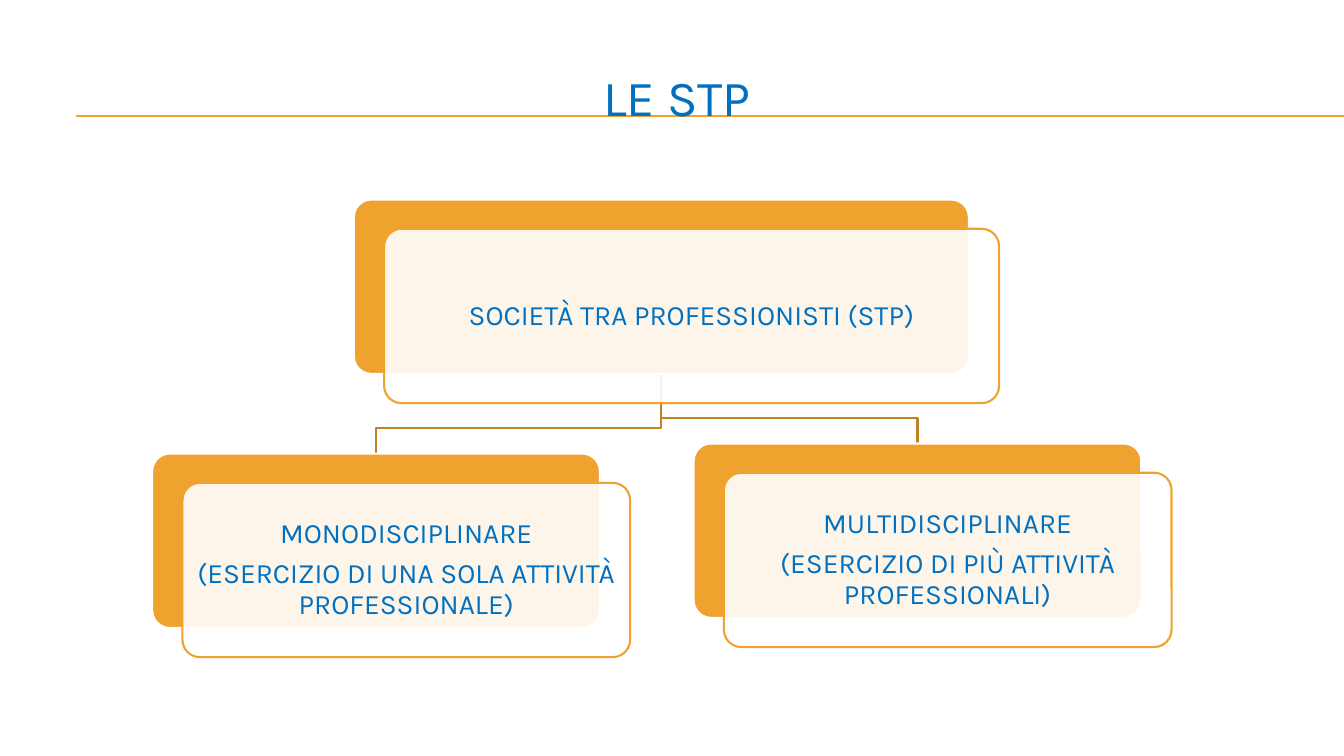
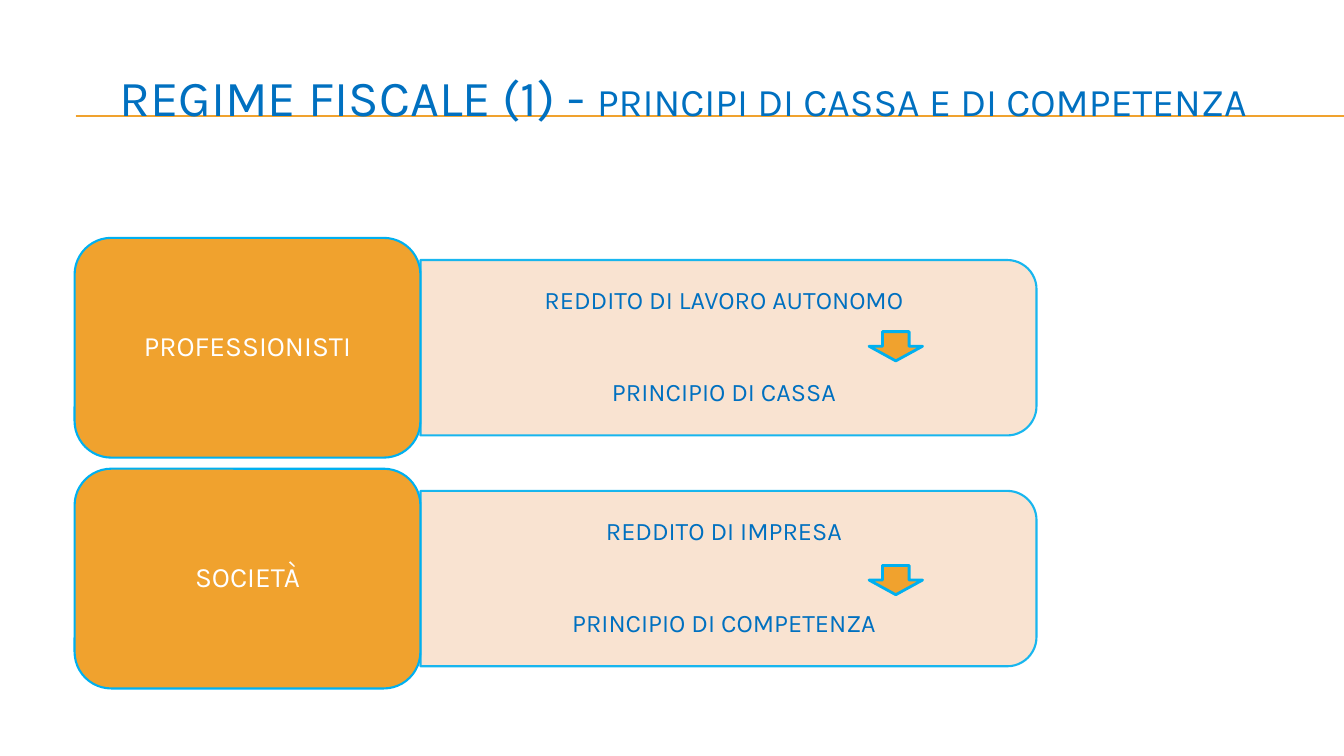
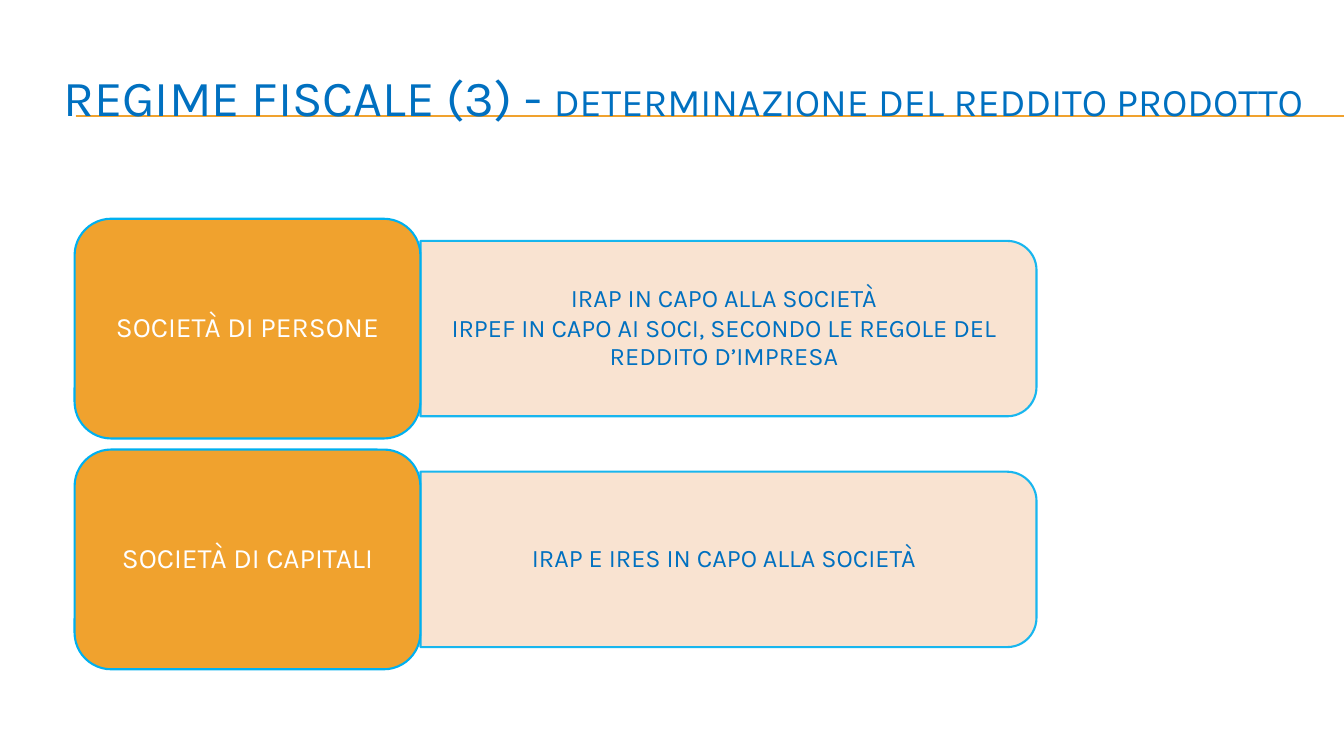
"""Builds three slides on professional partnerships and their tax regime."""
from dataclasses import dataclass

from lxml import etree
from pptx import Presentation
from pptx.dml.color import RGBColor
from pptx.enum.shapes import MSO_CONNECTOR, MSO_SHAPE
from pptx.enum.text import MSO_ANCHOR, MSO_AUTO_SIZE, PP_ALIGN
from pptx.oxml.ns import qn
from pptx.util import Inches, Pt

STRAIGHT = MSO_CONNECTOR.STRAIGHT
ROUNDED = MSO_SHAPE.ROUNDED_RECTANGLE
ROUND_TOP = MSO_SHAPE.ROUND_2_SAME_RECTANGLE
DOWN_ARROW = MSO_SHAPE.DOWN_ARROW
MIDDLE = MSO_ANCHOR.MIDDLE
CENTER = PP_ALIGN.CENTER
NO_FIT = MSO_AUTO_SIZE.NONE


@dataclass(frozen=True)
class Theme:
    font: str = "Karla"
    blue: RGBColor = RGBColor(0x00, 0x70, 0xC0)
    sky: RGBColor = RGBColor(0x00, 0xB0, 0xF0)
    orange: RGBColor = RGBColor(0xF0, 0xA2, 0x2E)
    brown: RGBColor = RGBColor(0xC0, 0x82, 0x25)
    peach: RGBColor = RGBColor(0xF9, 0xE0, 0xCD)
    white: RGBColor = RGBColor(0xFF, 0xFF, 0xFF)
    title: int = 36
    subtitle: int = 28
    label: int = 20
    detail: int = 18
    rule: float = 0.75
    outline: float = 1.5
    opacity: int = 90


class Deck:
    LABEL_W, LABEL_H = 3.43, 2.18
    PANEL_W, PANEL_H = 6.11, 1.74
    ROW_PITCH = 2.29
    CARD_H = 1.73

    def __init__(self, theme):
        self.theme = theme
        self.prs = Presentation()
        self.prs.slide_width, self.prs.slide_height = Inches(13.33), Inches(7.5)
        self.layout = self.prs.slide_layouts[5]
        self.s = None

    def box(self, left, top, width, height):
        return [Inches(v) for v in (left, top, width, height)]

    def slide(self, title, subtitle=""):
        first = self.s is None
        self.s = self.prs.slides.add_slide(self.layout)
        if first:
            self.title_rules()
        ph = self.s.shapes.title
        ph.left, ph.top, ph.width, ph.height = self.box(0.44, 0.5, 12.67, 0.92)
        tf = ph.text_frame
        tf.auto_size, tf.vertical_anchor = NO_FIT, MIDDLE
        p = tf.paragraphs[0]
        p.alignment = CENTER
        self.style(p.font, self.theme.title, self.theme.blue)
        p.add_run().text = title
        if subtitle:
            r = p.add_run()
            r.text = subtitle
            r.font.size = Pt(self.theme.subtitle)

    def title_rules(self):
        for y in (1.15, 1.16):
            line = self.s.shapes.add_connector(
                STRAIGHT, Inches(0.75), Inches(y), Inches(13.33), Inches(y))
            line.line.color.rgb = self.theme.orange
            line.line.width = Pt(self.theme.rule)
            etree.SubElement(line.element.spPr, qn("a:effectLst"))
            self.layout.shapes.element.append(line.element)

    def style(self, font, size, color):
        font.name, font.size, font.color.rgb = self.theme.font, Pt(size), color

    def fade(self, element):
        for color in element.iter(qn("a:srgbClr")):
            alpha = etree.SubElement(color, qn("a:alpha"))
            alpha.set("val", str(self.theme.opacity * 1000))

    def shape(self, kind, box, fill, line, weight=None):
        sp = self.s.shapes.add_shape(kind, *self.box(*box))
        sp.shadow.inherit = False
        sp.fill.solid()
        sp.fill.fore_color.rgb = fill
        sp.line.color.rgb = line
        sp.line.width = Pt(weight or self.theme.outline)
        return sp

    def text(self, sp, lines, size, color, inset, after, gap=0):
        tf = sp.text_frame
        tf.word_wrap, tf.vertical_anchor = True, MIDDLE
        tf.margin_left = tf.margin_right = Inches(inset[0])
        tf.margin_top = tf.margin_bottom = Inches(inset[1])
        for i, line in enumerate(lines):
            p = tf.add_paragraph() if i else tf.paragraphs[0]
            p.text = line
            p.alignment, p.line_spacing = CENTER, 0.9
            p.space_before, p.space_after = Pt(gap if i else 0), Pt(after)
            self.style(p.font, size, color)

    def card(self, left, top, width, lines):
        t = self.theme
        back = self.shape(ROUNDED, (left, top, width, self.CARD_H), t.orange, t.white)
        front = self.shape(ROUNDED, (left + 0.3, top + 0.29, width, self.CARD_H),
                           t.white, t.orange)
        self.fade(front.element.spPr.find(qn("a:solidFill")))
        for sp in (back, front):
            sp.adjustments[0] = 0.1
        self.text(front, lines, t.label, t.blue, (0.08, 0.08), 7)

    def branch(self, x1, y1, x2, y2):
        bend = y2 - 0.25
        corners = [(x1, bend), (x2, bend), (x2, y2)]
        path = self.s.shapes.build_freeform(Inches(x1), Inches(y1))
        path.add_line_segments([(Inches(x), Inches(y)) for x, y in corners], close=False)
        sp = path.convert_to_shape()
        sp.shadow.inherit = False
        sp.fill.background()
        sp.line.color.rgb = self.theme.brown
        sp.line.width = Pt(self.theme.outline)

    def row(self, top, label, details, gap):
        t, w, h = self.theme, self.PANEL_W, self.PANEL_H
        left, mid = 0.74 + self.LABEL_W, top + self.LABEL_H / 2
        panel = self.shape(ROUND_TOP, (left + (w - h) / 2, mid - w / 2, h, w),
                           t.peach, t.sky)
        panel.rotation = 90
        self.fade(panel.element.spPr)
        tb = self.s.shapes.add_textbox(*self.box(left, mid - 0.79, 6.02, 1.57))
        self.text(tb, details, t.detail, t.blue, (0.27, 0.14), 2.5, gap)
        sp = self.shape(ROUNDED, (0.74, top, self.LABEL_W, self.LABEL_H), t.orange, t.sky)
        self.text(sp, [label], t.label, t.white, (0.08, 0.04), 7)

    def rows(self, top, entries, gap=0):
        for i, (label, details) in enumerate(entries):
            self.row(top + i * self.ROW_PITCH, label, details, gap)

    def arrow(self, left, top):
        self.shape(DOWN_ARROW, (left, top, 0.53, 0.29), self.theme.orange,
                   self.theme.sky, 2)


def main():
    deck = Deck(Theme())

    deck.slide("LE STP ")
    root_left, root_top, root_width, child_width = 3.51, 1.98, 6.1, 4.44
    children = [
        (1.51, 4.5, ["MONODISCIPLINARE",
                     "(ESERCIZIO DI UNA SOLA ATTIVITÀ PROFESSIONALE)"]),
        (6.88, 4.4, ["MULTIDISCIPLINARE",
                     "(ESERCIZIO DI PIÙ ATTIVITÀ PROFESSIONALI)"]),
    ]
    for left, top, _ in children:
        deck.branch(root_left + root_width / 2, root_top + deck.CARD_H,
                    left + child_width / 2, top)
    deck.card(root_left, root_top, root_width, ["SOCIETÀ TRA PROFESSIONISTI (STP)"])
    for left, top, lines in children:
        deck.card(left, top, child_width, lines)

    deck.slide("REGIME FISCALE (1) - ", "PRINCIPI DI CASSA E DI COMPETENZA")
    deck.rows(2.36, [
        ("PROFESSIONISTI", ["REDDITO DI LAVORO AUTONOMO", "PRINCIPIO DI CASSA"]),
        ("SOCIETÀ", ["REDDITO DI IMPRESA", "PRINCIPIO DI COMPETENZA"]),
    ], gap=44)
    for top in (3.29, 5.61):
        deck.arrow(8.62, top)

    deck.slide("REGIME FISCALE (3) - ", "DETERMINAZIONE DEL REDDITO PRODOTTO")
    deck.rows(2.17, [
        ("SOCIETÀ DI PERSONE",
         ["IRAP IN CAPO ALLA SOCIETÀ",
          "IRPEF IN CAPO AI SOCI, SECONDO LE REGOLE DEL REDDITO D’IMPRESA"]),
        ("SOCIETÀ DI CAPITALI", ["IRAP E IRES IN CAPO ALLA SOCIETÀ"]),
    ])

    deck.prs.save("out.pptx")


if __name__ == "__main__":
    main()
